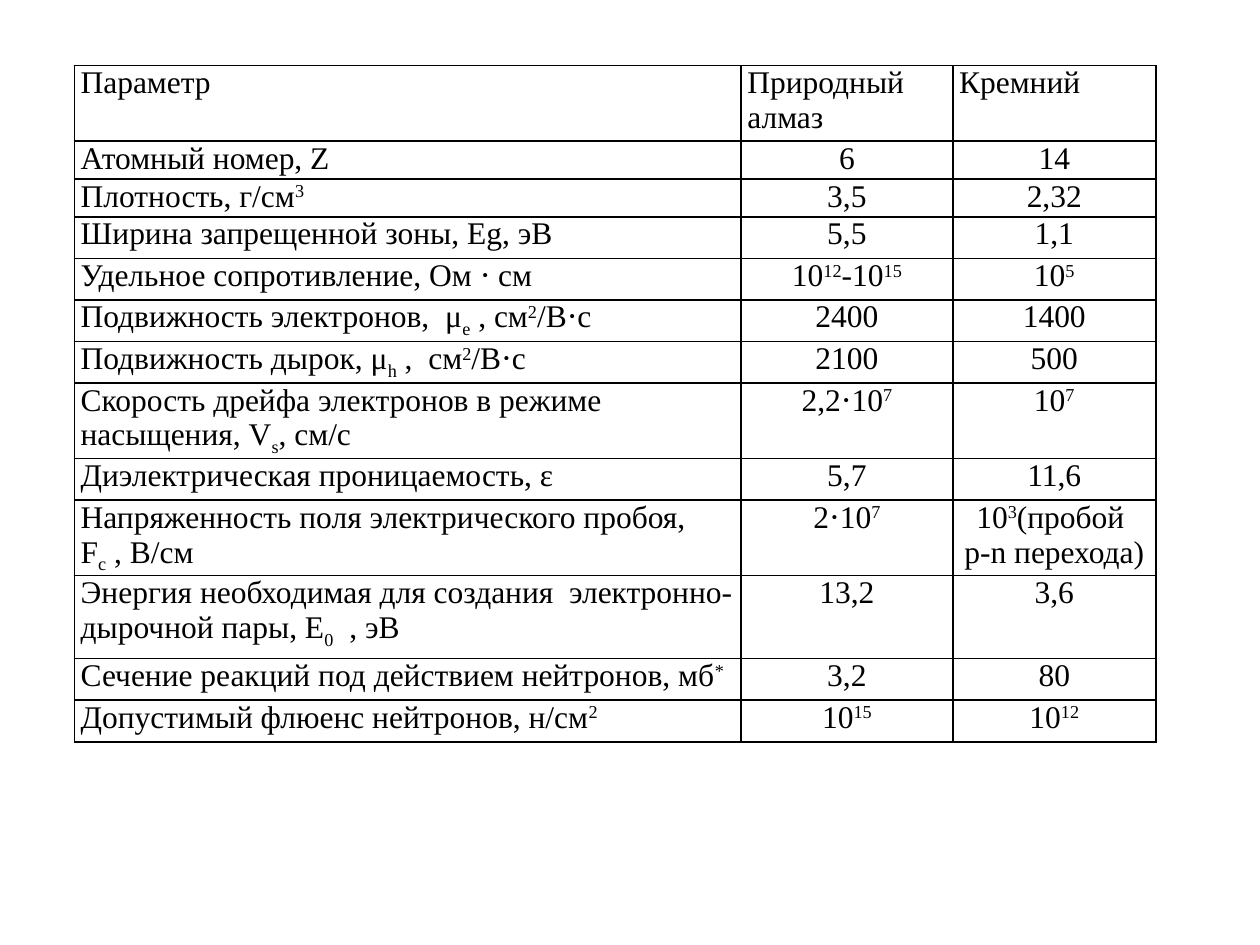
from lxml import etree
from pptx import Presentation
from pptx.dml.color import RGBColor
from pptx.enum.text import PP_ALIGN
from pptx.oxml.ns import qn
from pptx.util import Pt

LEFT, CENTER = PP_ALIGN.LEFT, PP_ALIGN.CENTER
COLORS = {"ink": "000000"}
BASELINES = {"^": "30000", "_": "-25000"}

# Row heights
SMALL, LINE, DOUBLE, TALL = 21.6, 23.75, 43.2, 47.5
WIDTHS = [381, 121, 116]

# "|" separates runs, a leading "^" or "_" makes a superscript or subscript
ROWS = [
    (DOUBLE, "Параметр", "Природный алмаз", "Кремний"),
    (SMALL, "Атомный номер, Z", "6", "14"),
    (SMALL, "Плотность, г/см|^3", "3,5", "2,32"),
    (LINE, "Ширина запрещенной зоны, Eg, эВ", "5,5", "1,1"),
    (LINE, "Удельное сопротивление, Ом ⋅ см", "10|^12|-10|^15", "10|^5"),
    (LINE, "Подвижность электронов,  μ|_е| , см|^2|/В⋅с", "2400", "1400"),
    (LINE, "Подвижность дырок, μ|_h| ,  см|^2|/В⋅с", "2100", "500"),
    (DOUBLE, "Скорость дрейфа электронов в режиме насыщения, V|_s|, см/с",
     "2,2⋅10|^7", "10|^7"),
    (LINE, "Диэлектрическая проницаемость, ε", "5,7", "11,6"),
    (DOUBLE, "Напряженность поля электрического пробоя, F|_c| , В/см",
     "2⋅10|^7", "10|^3|(пробой \np-n перехода)"),
    (TALL, "Энергия необходимая для создания  электронно-дырочной пары, E|_0|  , эВ",
     "13,2", "3,6"),
    (LINE, "Сечение реакций под действием нейтронов, мб|^*", "3,2", "80"),
    (LINE, "Допустимый флюенс нейтронов, н/см|^2", "10|^15", "10|^12"),
]


class SlideBuilder:
    def __init__(self, slide, font="Times New Roman", size=18, inset=3.6):
        self.slide, self.font, self.size, self.inset = slide, font, size, inset

    def run(self, p, text):
        r = p.add_run()
        r.font.name, r.font.size = self.font, Pt(self.size)
        r.font.color.rgb = RGBColor.from_string(COLORS["ink"])
        if text[0] in BASELINES:
            r._r.get_or_add_rPr().set("baseline", BASELINES[text[0]])
            text = text[1:]
        r.text = text

    def borders(self, cell, width=1):
        tc_pr = cell._tc.get_or_add_tcPr()
        for i, side in enumerate(("lnL", "lnR", "lnT", "lnB")):
            ln = etree.Element(qn(f"a:{side}"), w=str(Pt(width)))
            fill = etree.SubElement(ln, qn("a:solidFill"))
            etree.SubElement(fill, qn("a:srgbClr"), val=COLORS["ink"])
            tc_pr.insert(i, ln)

    def cell(self, cell, text, align):
        cell.margin_left = cell.margin_right = Pt(self.inset)
        cell.margin_top = cell.margin_bottom = Pt(0)
        cell.fill.background()
        self.borders(cell)
        tf = cell.text_frame
        for i, line in enumerate(text.split("\n")):
            p = tf.add_paragraph() if i else tf.paragraphs[0]
            p.alignment = align
            for part in line.split("|"):
                self.run(p, part)

    def table(self, left, top, widths, rows):
        height = sum(row[0] for row in rows)
        table = self.slide.shapes.add_table(
            len(rows), len(widths), Pt(left), Pt(top), Pt(sum(widths)), Pt(height)).table
        table.first_row = table.horz_banding = False
        for column, width in zip(table.columns, widths):
            column.width = Pt(width)
        for i, (row_height, *texts) in enumerate(rows):
            table.rows[i].height = Pt(row_height)
            for j, text in enumerate(texts):
                self.cell(table.cell(i, j), text, CENTER if i and j else LEFT)


def main():
    prs = Presentation()
    prs.slide_width, prs.slide_height = Pt(720), Pt(540)
    s = SlideBuilder(prs.slides.add_slide(prs.slide_layouts[6]))

    # Comparison of diamond and silicon
    s.table(42.5, 37.5, WIDTHS, ROWS)

    prs.save("out.pptx")


if __name__ == "__main__":
    main()
